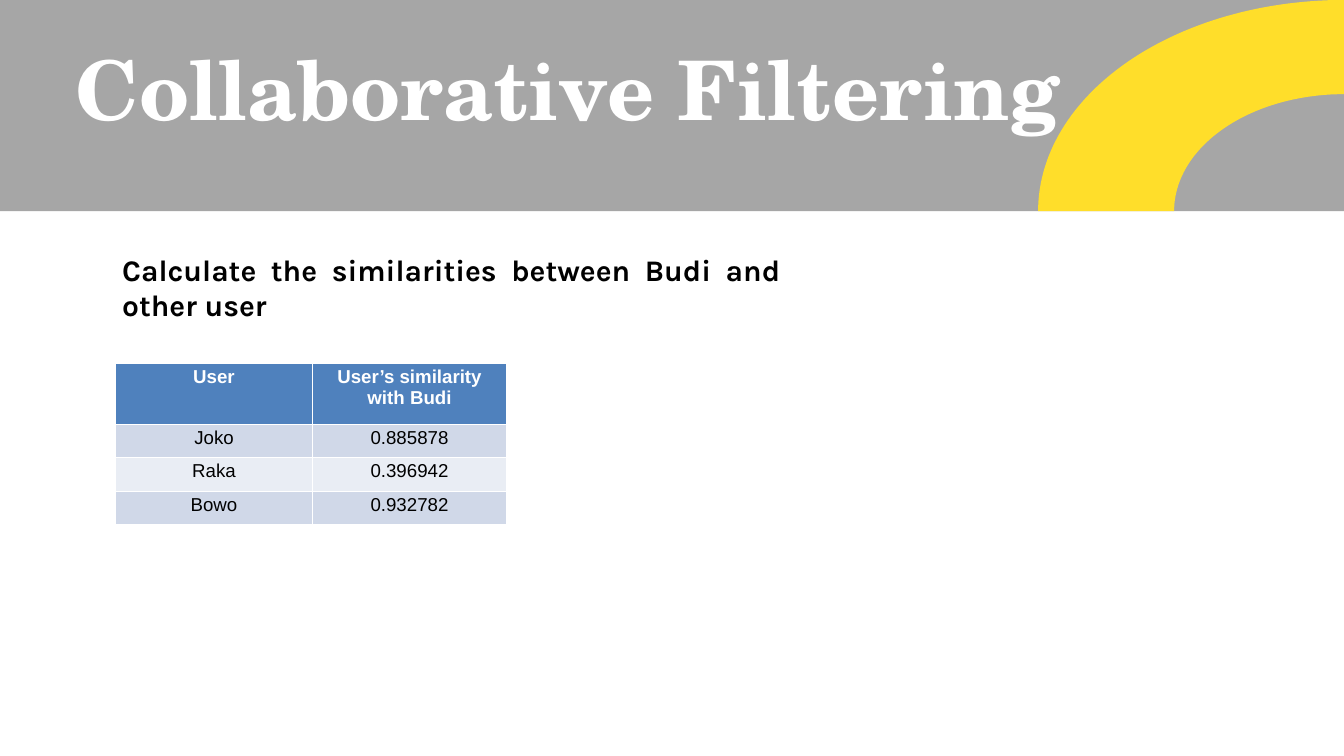
"""Build the Collaborative Filtering slide with its user similarity table."""
from math import cos, pi, sin

from pptx import Presentation
from pptx.dml.color import RGBColor
from pptx.enum.shapes import MSO_SHAPE
from pptx.enum.text import MSO_ANCHOR, MSO_AUTO_SIZE, PP_ALIGN
from pptx.util import Cm, Pt


def paint(sp, color):
    sp.fill.solid()
    sp.fill.fore_color.rgb = RGBColor.from_string(color)


def write(tf, text, size, font, color="000000", bold=True, align=PP_ALIGN.LEFT):
    tf.word_wrap = True
    tf.vertical_anchor = MSO_ANCHOR.TOP
    p = tf.paragraphs[0]
    p.alignment = align
    r = p.add_run()
    r.text = text
    r.font.size = Pt(size)
    r.font.name = font
    r.font.bold = bold
    r.font.color.rgb = RGBColor.from_string(color)


prs = Presentation()
prs.slide_width, prs.slide_height = Cm(50.8), Cm(28.58)
s = prs.slides.add_slide(prs.slide_layouts[5])
title = s.shapes.title

band_h = 7.98
band = s.shapes.add_shape(MSO_SHAPE.RECTANGLE, 0, 0, prs.slide_width, Cm(band_h))

steps = 60
angles = [pi / 2 * i / steps for i in range(steps + 1)]
outer = [(50.8 - 11.56 * cos(a), band_h - band_h * sin(a)) for a in angles]
inner = [(50.8 - 6.42 * cos(a), band_h - 4.42 * sin(a)) for a in reversed(angles)]
points = [(Cm(x), Cm(y)) for x, y in outer + inner]
builder = s.shapes.build_freeform(*points[0])
builder.add_line_segments(points[1:], close=True)
arc = builder.convert_to_shape()

for sp, color in ((band, "A6A6A6"), (arc, "FFDE2A")):
    paint(sp, color)
    sp.line.fill.background()
    sp.shadow.inherit = False

arc._element.addnext(title._element)
title.left, title.top, title.width, title.height = Cm(2.84), Cm(1.42), Cm(42.19), Cm(3.81)
tf = title.text_frame
tf.auto_size = MSO_AUTO_SIZE.SHAPE_TO_FIT_TEXT
tf.margin_left = tf.margin_right = tf.margin_bottom = 0
tf.margin_top = Cm(0.03)
write(tf, "Collaborative Filtering", 88, "TeX Gyre Schola", "FFFFFF")

body = s.shapes.add_textbox(Cm(4.37), Cm(9.37), Cm(25.4), Cm(4.45))
write(body.text_frame, "Calculate the similarities between Budi and other user",
      32, "Karla", align=PP_ALIGN.JUSTIFY)

rows = [
    ("User", "User’s similarity with Budi"),
    ("Joko", "0.885878"),
    ("Raka", "0.396942"),
    ("Bowo", "0.932782"),
]
table = s.shapes.add_table(len(rows), 2, Cm(4.37), Cm(13.72), Cm(14.78), Cm(6.12)).table
for column, width in zip(table.columns, (7.44, 7.34)):
    column.width = Cm(width)
for i, row in enumerate(rows):
    header = i == 0
    table.rows[i].height = Cm(2.31 if header else 1.27)
    for j, text in enumerate(row):
        cell = table.cell(i, j)
        paint(cell, "4F81BD" if header else ("E9EDF4", "D0D8E8")[i % 2])
        write(cell.text_frame, text, 20, "Arial", "FFFFFF" if header else "000000",
              header, PP_ALIGN.CENTER)

prs.save("out.pptx")
